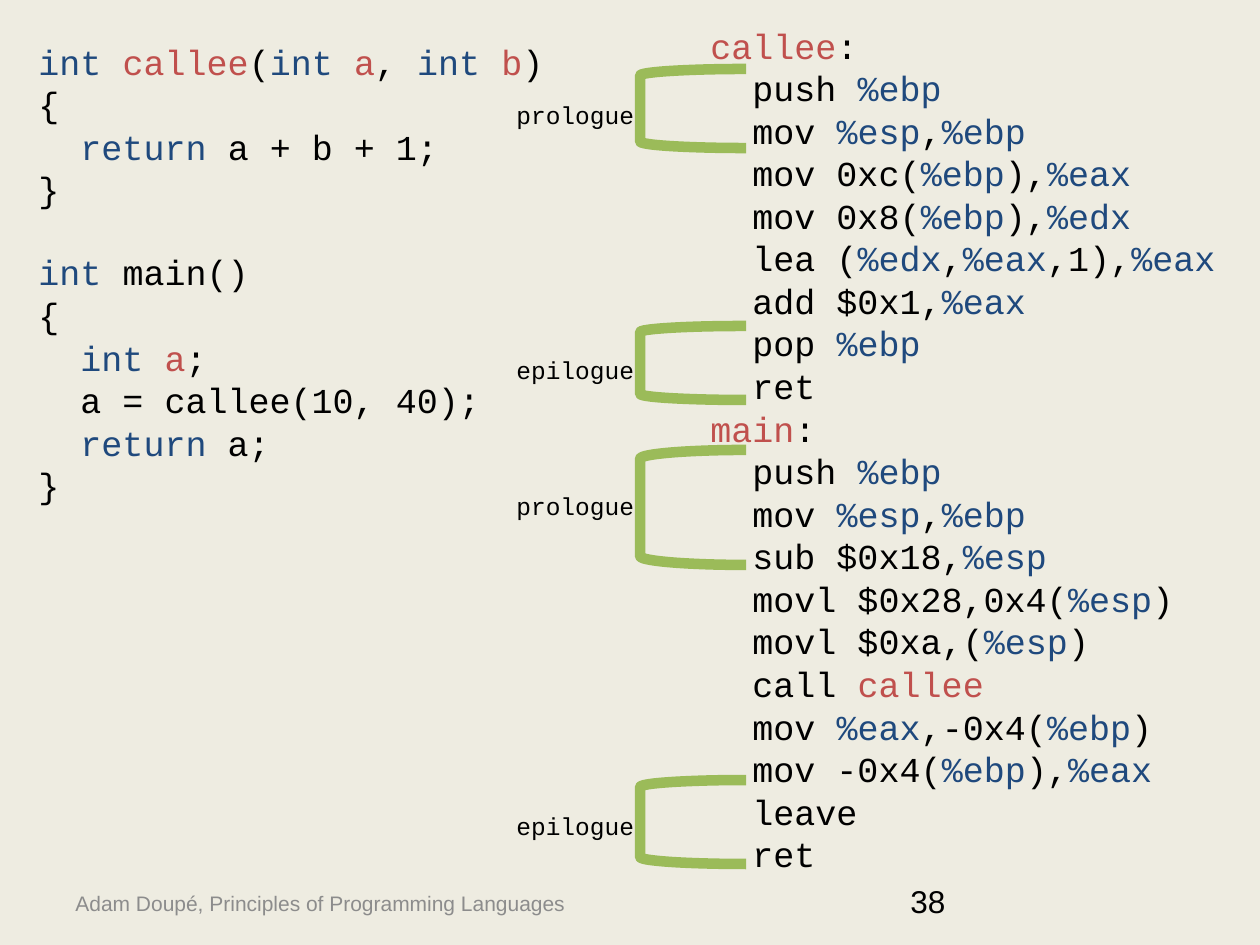
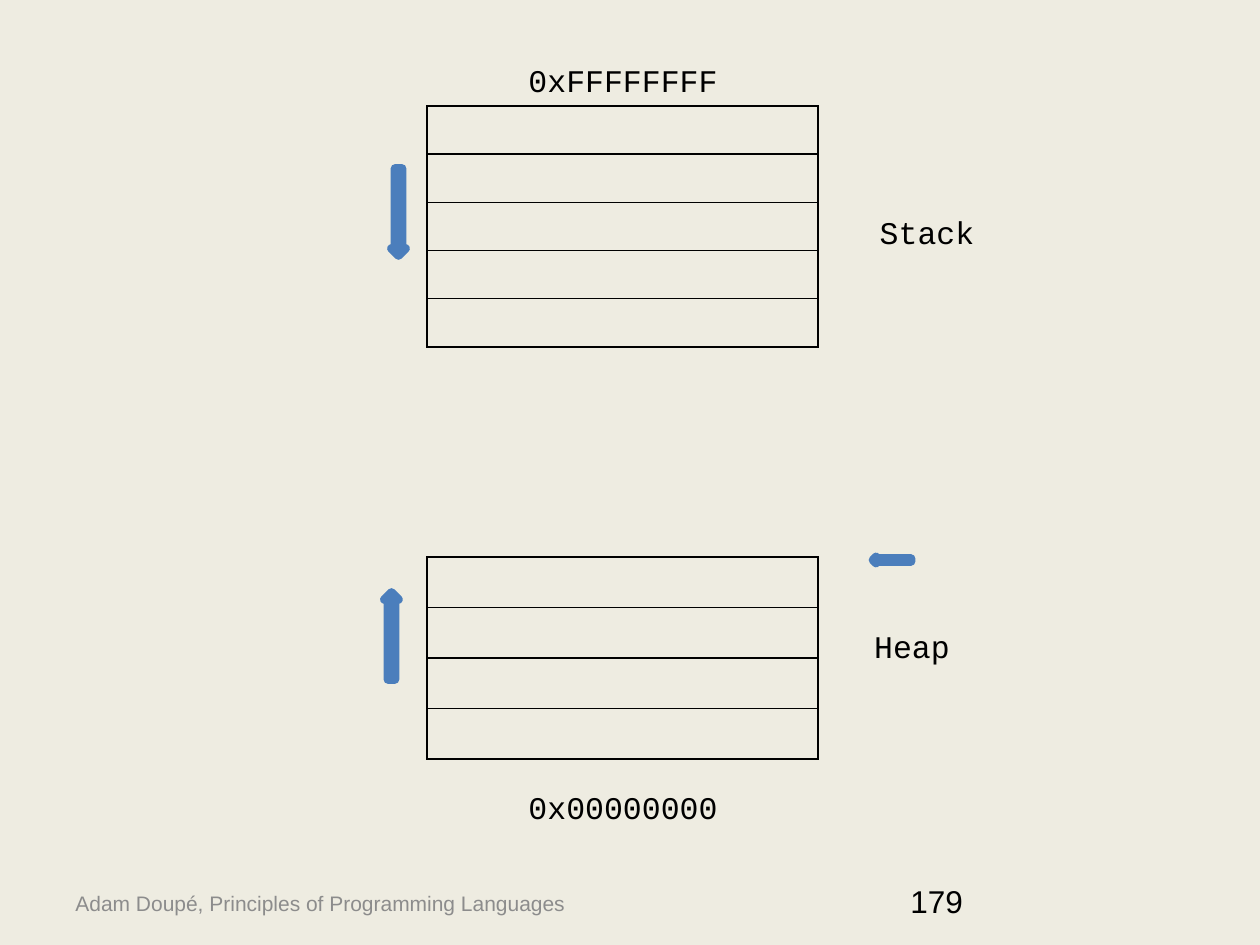
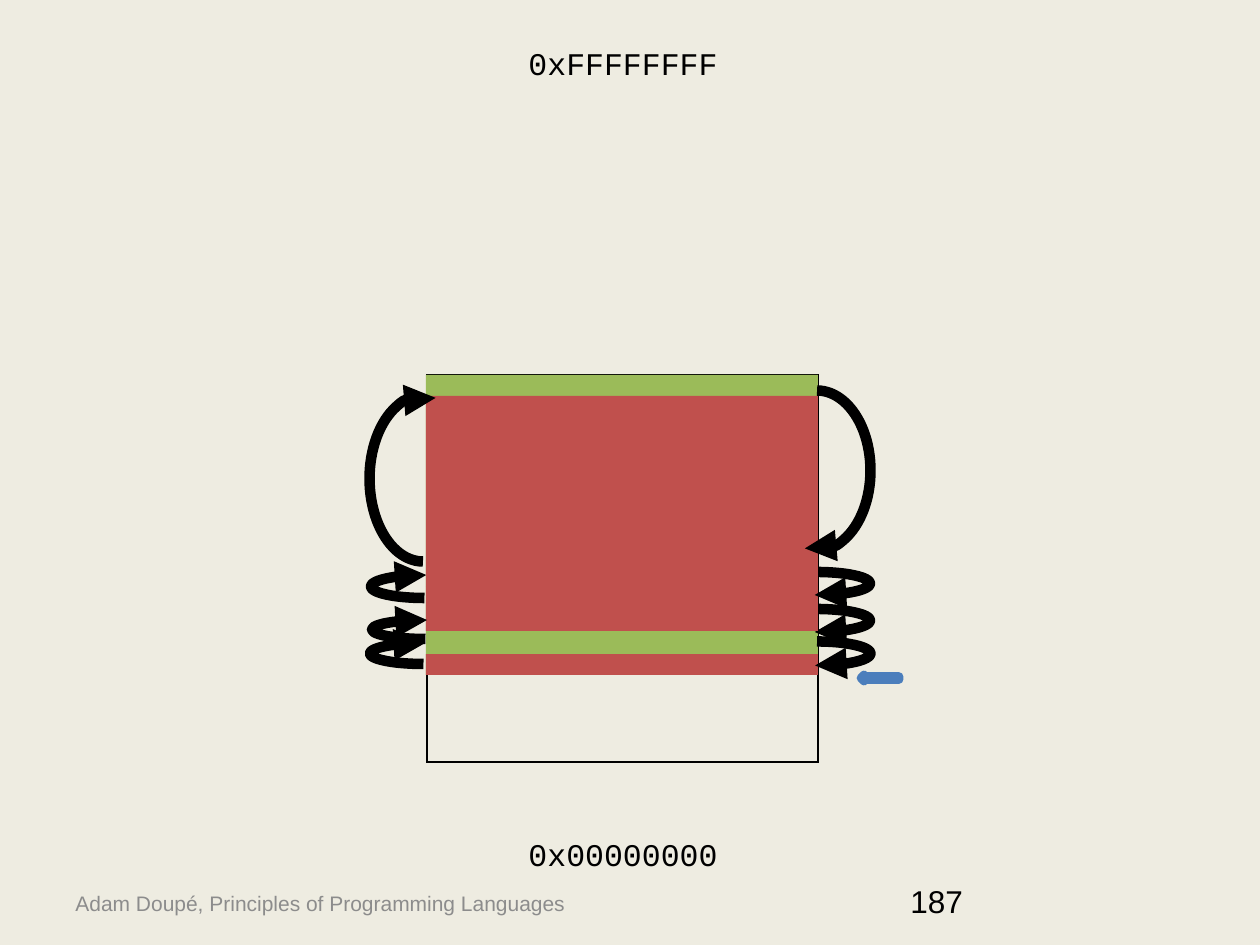
from typing import NamedTuple

from lxml import etree
from pptx import Presentation
from pptx import util as u
from pptx.dml import color
from pptx.enum import shapes, text
from pptx.oxml import ns

SCALE = 914400 / 126
INK, BLUE, RED, GREEN = "000000", "1F497D", "C0504D", "9BBB59"
PAPER, GREY, EDGE = "EEECE1", "8C8C8C", "4B7EBC"
MONO, SANS = "Courier New", "Arial"
CODE_SIZE, CODE_GAP, CODE_LINE = 20, 5.1, 23.2
KIND = shapes.MSO_SHAPE
FOOTER = "Adam Doupé, Principles of Programming Languages"

# ^blue^ and ~red~ mark the coloured words of the code.
C_CODE = """\
^int ^~callee~(^int ^~a~, ^int ^~b~)
{
  ^return ^a + b + 1;
}

^int ^main()
{
  ^int ^~a~;
  a = callee(10, 40);
  ^return^ a;
}"""

ASM_CODE = """\
~callee~:
  push ^%ebp^
  mov ^%esp^,^%ebp^
  mov 0xc(^%ebp^),^%eax^
  mov 0x8(^%ebp^),^%edx^
  lea (^%edx^,^%eax^,1),^%eax^
  add $0x1,^%eax^
  pop ^%ebp^
  ret
~main~:
  push ^%ebp^
  mov ^%esp^,^%ebp^
  sub $0x18,^%esp^
  movl $0x28,0x4(^%esp^)
  movl $0xa,(^%esp^)
  call ~callee~
  mov ^%eax^,-0x4(^%ebp^)
  mov -0x4(^%ebp^),^%eax^
  leave
  ret"""


class Box(NamedTuple):
    x: int
    y: int
    w: int
    h: int


class Brace(NamedTuple):
    name: str
    top: int
    high: int
    label: int
    tall: int


class Band(NamedTuple):
    top: int
    high: int
    hue: str


class Turn(NamedTuple):
    box: Box
    angle: int


BRACES = [
    Brace("prologue", 450, 115, 485, 66),
    Brace("epilogue", 780, 84, 805, 72),
    Brace("prologue", 69, 79, 94, 45),
    Brace("epilogue", 326, 74, 349, 64),
]

LEFT, RIGHT = 270, 90
HEAP = [
    Band(375, 300, GREEN),
    Turn(Box(413, 600, 21, 107), LEFT),
    Turn(Box(805, 567, 23, 107), RIGHT),
    Band(587, 44, RED),
    Turn(Box(413, 533, 23, 107), LEFT),
    Turn(Box(805, 530, 23, 107), RIGHT),
    Band(654, 21, RED),
    Turn(Box(416, 576, 19, 107), LEFT),
    Turn(Box(805, 600, 24, 107), RIGHT),
    Band(396, 191, RED),
    Turn(Box(340, 425, 166, 107), LEFT),
    Turn(Box(737, 417, 160, 107), RIGHT),
]


def px(n: float) -> u.Emu:
    return u.Emu(round(n * SCALE))


def place(box: Box) -> list[u.Emu]:
    return [px(n) for n in box]


def rgb(hue: str) -> color.RGBColor:
    return color.RGBColor.from_string(hue)


def add_run(para, words: str, size: int, face: str, hue: str) -> None:
    run = para.add_run()
    run.text = words
    run.font.size = u.Pt(size)
    run.font.name = face
    run.font.color.rgb = rgb(hue)


def add_frame(tree, box: Box):
    frame = tree.add_textbox(*place(box)).text_frame
    frame.word_wrap = True
    return frame


def add_label(tree, box: Box, words: str, size: int = 18, face: str = MONO,
              hue: str = INK, centre: bool = False):
    frame = add_frame(tree, box)
    para = frame.paragraphs[0]
    if centre:
        para.alignment = text.PP_ALIGN.CENTER
    add_run(para, words, size, face, hue)
    return frame


def add_mark(tree, x: int, y: int, words: str) -> None:
    add_label(tree, Box(x, y, 290, 50), words, centre=True)


def split(line: str) -> list[tuple[str, str]]:
    """Cut a marked line of code into words and their colours."""
    parts = []
    for i, chunk in enumerate(line.split("^")):
        if i % 2:
            parts.append((chunk, BLUE))
        else:
            parts += [(bit, RED if j % 2 else INK)
                      for j, bit in enumerate(chunk.split("~"))]
    return [part for part in parts if part[0]]


def add_code(tree, box: Box, code: str) -> None:
    """Set code line by line; an empty line becomes space before the next."""
    frame = add_frame(tree, box)
    para, gap = frame.paragraphs[0], 0
    for i, line in enumerate(code.splitlines()):
        if not line:
            gap += CODE_LINE
            continue
        if i:
            para = frame.add_paragraph()
            para.space_before = u.Pt(gap)
        para.line_spacing = 0.8
        for words, hue in split(line):
            add_run(para, words, CODE_SIZE, MONO, hue)
        gap = CODE_GAP


def add_form(tree, kind, box: Box, fill: str = "", line: str = "",
             width: int = 6, angle: int = 0):
    form = tree.add_shape(kind, *place(box))
    form.shadow.inherit = False
    form.rotation = angle
    if fill:
        form.fill.solid()
        form.fill.fore_color.rgb = rgb(fill)
    else:
        form.fill.background()
    if line:
        form.line.color.rgb = rgb(line)
        form.line.width = u.Pt(width)
    else:
        form.line.fill.background()
    return form


def add_arrow(tree, box: Box, angle: int) -> None:
    form = add_form(tree, KIND.RIGHT_ARROW, box, line=EDGE, width=5,
                    angle=angle)
    form.fill.gradient()
    form.fill.gradient_angle = 90
    for stop, hue in zip(form.fill.gradient_stops, ("3F80CE", "A4C4FF")):
        stop.color.rgb = rgb(hue)


def add_turn(tree, turn: Turn) -> None:
    """Draw a half circle that ends in an arrowhead."""
    form = add_form(tree, KIND.ARC, turn.box, line=INK, angle=turn.angle)
    form.adjustments[0] = 108.03
    form.adjustments[1] = 5.31
    line = form.line._get_or_add_ln()
    etree.SubElement(line, ns.qn("a:tailEnd"), type="triangle")


def add_brace(tree, brace: Brace) -> None:
    group = tree.add_group_shape().shapes
    add_form(group, KIND.LEFT_BRACKET,
             Box(640, brace.top, 106, brace.high), line=GREEN)
    add_label(group, Box(504, brace.label, 189, brace.tall), brace.name, 14)


def set_edges(cell, shown: str) -> None:
    """Draw the named sides (of L, R, T, B) and blank the others."""
    props = cell._tc.get_or_add_tcPr()
    for i, side in enumerate("LRTB"):
        line = etree.Element(ns.qn(f"a:ln{side}"), w=str(u.Pt(1)))
        if side in shown:
            fill = etree.SubElement(line, ns.qn("a:solidFill"))
            etree.SubElement(fill, ns.qn("a:srgbClr"), val=INK)
        else:
            etree.SubElement(line, ns.qn("a:noFill"))
        props.insert(i, line)


def add_stack(tree, top: int, high: int, count: int,
              ruled: bool = True) -> None:
    """Draw memory as a one-column table, with or without inner rules."""
    table = tree.add_table(count, 1, *place(Box(427, top, 391, high))).table
    table.first_row = table.horz_banding = False
    for i, row in enumerate(table.rows):
        row.height = px(high / count)
        cell = row.cells[0]
        cell.margin_top = cell.margin_bottom = 0
        cell.fill.background()
        shown = "LR"
        if ruled or i == 0:
            shown += "T"
        if ruled or i == count - 1:
            shown += "B"
        set_edges(cell, shown)


def add_page(deck, number: int):
    tree = deck.slides.add_slide(deck.slide_layouts[6]).shapes
    foot = add_label(tree, Box(63, 878, 537, 50), FOOTER, 12, SANS, GREY)
    foot.vertical_anchor = text.MSO_ANCHOR.MIDDLE
    add_label(tree, Box(898, 876, 294, 50), str(number), face=SANS)
    return tree


def draw_code(deck) -> None:
    tree = add_page(deck, 38)
    add_code(tree, Box(26, 42, 583, 624), C_CODE)
    add_code(tree, Box(698, 26, 804, 919), ASM_CODE)
    for brace in BRACES:
        add_brace(tree, brace)


def draw_memory(deck) -> None:
    tree = add_page(deck, 179)
    add_stack(tree, 106, 241, 5)
    add_stack(tree, 557, 202, 4)
    add_mark(tree, 478, 55, "0xFFFFFFFF")
    add_mark(tree, 478, 782, "0x00000000")
    add_mark(tree, 782, 207, "Stack")
    add_mark(tree, 767, 621, "Heap")
    add_arrow(tree, Box(348, 629, 87, 14), 270)
    add_arrow(tree, Box(355, 205, 87, 14), 90)
    add_arrow(tree, Box(873, 557, 38, 6), 180)


def draw_heap(deck) -> None:
    tree = add_page(deck, 187)
    add_stack(tree, 375, 387, 8, ruled=False)
    add_mark(tree, 478, 38, "0xFFFFFFFF")
    add_mark(tree, 478, 829, "0x00000000")
    add_arrow(tree, Box(861, 675, 38, 6), 180)
    for part in HEAP:
        if isinstance(part, Turn):
            add_turn(tree, part)
        else:
            add_form(tree, KIND.RECTANGLE,
                     Box(426, part.top, 392, part.high), part.hue)


def main() -> None:
    deck = Presentation()
    deck.slide_width, deck.slide_height = px(1260), px(945)
    back = deck.slide_master.background.fill
    back.solid()
    back.fore_color.rgb = rgb(PAPER)
    draw_code(deck)
    draw_memory(deck)
    draw_heap(deck)
    deck.save("out.pptx")


if __name__ == "__main__":
    main()
